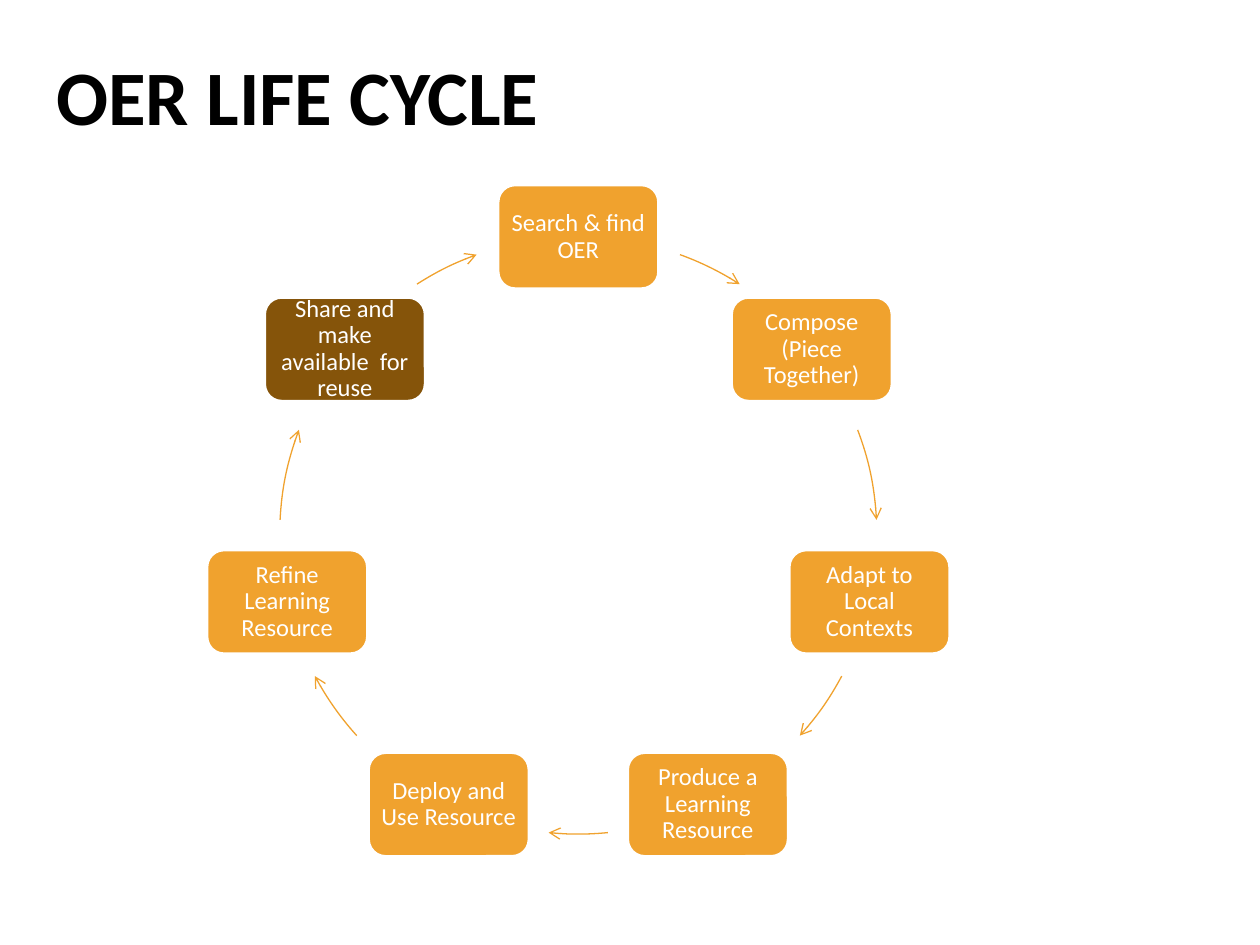
import math

import pptx
import pptx.dml.color
import pptx.enum.shapes
import pptx.enum.text
import pptx.util
from lxml import etree
from pptx.oxml.ns import qn

Inches = pptx.util.Inches
Shapes = pptx.enum.shapes.MSO_SHAPE
Align = pptx.enum.text.PP_ALIGN

ORANGE = "F0A22E"
BROWN = "85540A"
CENTER_X, CENTER_Y, RADIUS = 4.59, 4.25, 2.37
BOX_WIDTH, BOX_HEIGHT = 1.28, 0.83

STAGES = [
    ("Search & find OER", ORANGE, (19.9, 32.7)),
    ("Compose (Piece Together)", ORANGE, (69.3, 87)),
    ("Adapt to Local Contexts", ORANGE, (118.1, 132.1)),
    ("Produce a Learning Resource", ORANGE, (174.3, 185.7)),
    ("Deploy and Use Resource", ORANGE, (227.9, 241.9)),
    ("Refine Learning Resource", ORANGE, (273, 290.7)),
    ("Share and make available  for reuse", BROWN, (327.3, 340.1)),
]


def color(value):
    return pptx.dml.color.RGBColor.from_string(value)


def apply_values(target, values):
    for name, value in values.items():
        setattr(target, name, value)


class CycleSlide:
    font_name = "Calibri"

    def __init__(self, presentation):
        self.slide = presentation.slides.add_slide(presentation.slide_layouts[6])

    def set_text(self, shape, text, size, ink, bold, align, spacing, margins):
        frame = shape.text_frame
        apply_values(frame, {
            "word_wrap": True,
            "vertical_anchor": pptx.enum.text.MSO_ANCHOR.MIDDLE,
            **margins,
        })
        paragraph = frame.paragraphs[0]
        apply_values(paragraph, {
            "text": text, "alignment": align, "line_spacing": spacing,
        })
        apply_values(paragraph.font, {
            "name": self.font_name, "size": pptx.util.Pt(size), "bold": bold,
        })
        paragraph.font.color.rgb = color(ink)

    def outline(self, shape, ink, width):
        shape.shadow.inherit = False
        shape.line.color.rgb = color(ink)
        shape.line.width = pptx.util.Pt(width)

    def title(self, text):
        box = self.slide.shapes.add_textbox(
            Inches(0.35), Inches(0.13), Inches(9), Inches(1.25))
        self.set_text(box, text, 44, "000000", True, Align.LEFT, 1.0, {})

    def stage(self, text, fill, angle):
        center_x = CENTER_X + RADIUS * math.sin(angle)
        center_y = CENTER_Y - RADIUS * math.cos(angle)
        box = self.slide.shapes.add_shape(
            Shapes.ROUNDED_RECTANGLE,
            Inches(center_x - BOX_WIDTH / 2), Inches(center_y - BOX_HEIGHT / 2),
            Inches(BOX_WIDTH), Inches(BOX_HEIGHT))
        box.fill.solid()
        box.fill.fore_color.rgb = color(fill)
        self.outline(box, "FFFFFF", 2)
        sides = ("left", "right", "top", "bottom")
        margins = {f"margin_{side}": Inches(0.06) for side in sides}
        self.set_text(box, text, 14, "FFFFFF", False, Align.CENTER, 0.9, margins)

    def arrow(self, span):
        arc = self.slide.shapes.add_shape(
            Shapes.ARC,
            Inches(CENTER_X - RADIUS), Inches(CENTER_Y - RADIUS),
            Inches(2 * RADIUS), Inches(2 * RADIUS))
        for index, degrees in enumerate(span):
            arc.adjustments[index] = (degrees - 90) % 360 * 0.6
        arc.fill.background()
        self.outline(arc, ORANGE, 0.75)
        line = arc.element.spPr.find(qn("a:ln"))
        etree.SubElement(line, qn("a:tailEnd"), type="arrow")


def main():
    presentation = pptx.Presentation()
    apply_values(presentation, {
        "slide_width": Inches(10), "slide_height": Inches(7.5),
    })
    cycle = CycleSlide(presentation)
    cycle.title("OER LIFE CYCLE")
    for index, (text, fill, span) in enumerate(STAGES):
        cycle.stage(text, fill, index * math.tau / len(STAGES))
        cycle.arrow(span)
    presentation.save("out.pptx")


if __name__ == "__main__":
    main()
